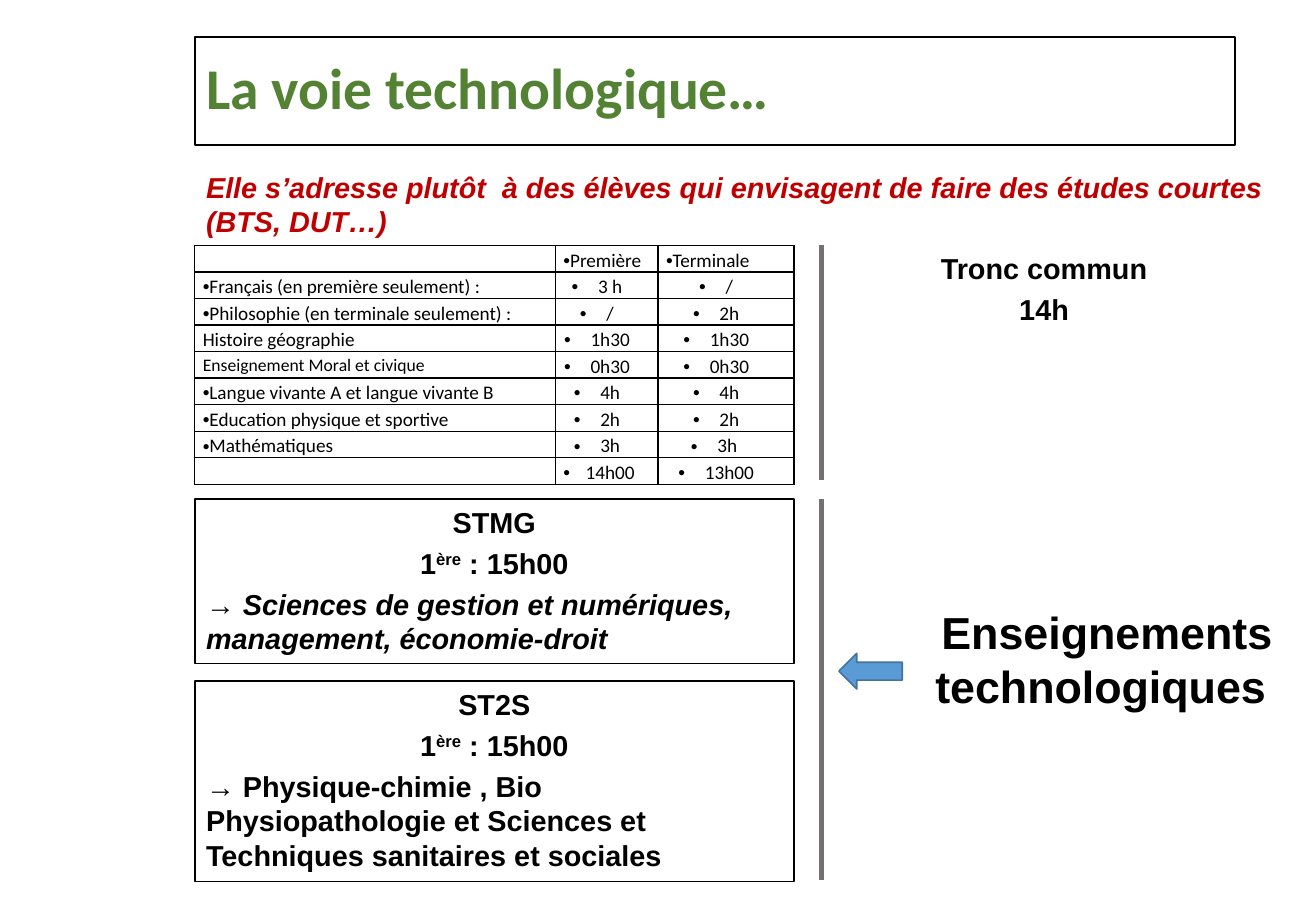
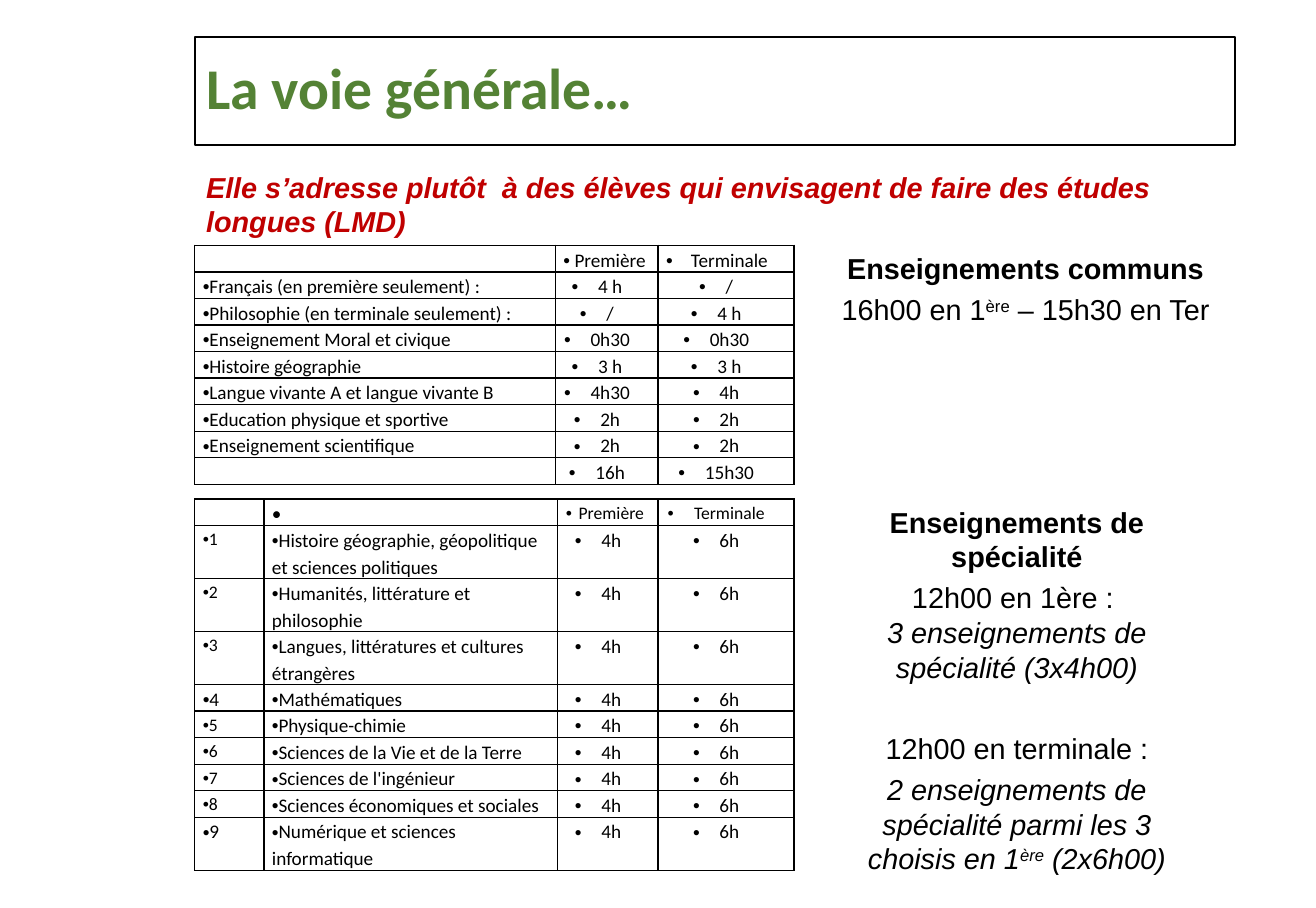
from dataclasses import dataclass
from typing import Optional, Sequence, Union

from pptx import Presentation
from pptx.dml.color import RGBColor
from pptx.enum.shapes import MSO_CONNECTOR as Connector
from pptx.enum.shapes import MSO_SHAPE as Preset
from pptx.enum.text import MSO_ANCHOR as Anchor
from pptx.enum.text import PP_ALIGN as Align
from pptx.oxml import parse_xml
from pptx.oxml.ns import nsdecls, qn
from pptx.oxml.xmlchemy import OxmlElement
from pptx.util import Inches, Pt


# Theme: colours, fonts and type sizes
@dataclass(frozen=True)
class Theme:
    black: str = "000000"
    title: str = "548235"
    audience: str = "C00000"
    rule: str = "767171"
    arrow: str = "5B9BD5"
    arrow_line: str = "43739E"
    body_font: str = "Arial"
    table_font: str = "Calibri"
    title_size: float = 36
    large_size: float = 28
    body_size: float = 18
    cell_size: float = 12
    small_size: float = 11
    paragraph_gap: float = 4


THEME = Theme()
LEFT = 1.69
TOP_BLOCK = 2.13
LOWER_BLOCK = 4.33
ROW_HEIGHT = 0.23


@dataclass(frozen=True)
class Box:
    left: float
    top: float
    width: float
    height: float

    def lengths(self) -> list:
        return [Inches(value) for value in (self.left, self.top, self.width, self.height)]


@dataclass(frozen=True)
class Span:
    text: str
    bold: bool = True
    italic: bool = False
    raised: bool = False


@dataclass(frozen=True)
class Line:
    spans: Sequence[Span]
    align: Align = Align.CENTER
    gap: float = THEME.paragraph_gap


@dataclass(frozen=True)
class Cell:
    text: str
    size: float = THEME.cell_size
    bullet: bool = True
    align: Align = Align.LEFT


@dataclass(frozen=True)
class Track:
    title: str
    audience: str
    audience_width: float
    headers: Sequence[Cell]
    subjects: Sequence[Sequence[Union[str, Cell]]]
    totals: Sequence[str]


def color(code: str) -> RGBColor:
    return RGBColor.from_string(code)


# Text
def write_text(paragraph, text: str, *, size: float = THEME.body_size,
               font: str = THEME.body_font, ink: str = THEME.black,
               bold: bool = False, italic: bool = False, raised: bool = False) -> None:
    for position, part in enumerate(text.split("\n")):
        if position:
            paragraph.add_line_break()
        if not part:
            continue
        run = paragraph.add_run()
        run.text = part
        run.font.size, run.font.name = Pt(size), font
        run.font.bold, run.font.italic = bold, italic
        run.font.color.rgb = color(ink)
        if raised:
            run.font._element.set("baseline", "30000")


def fill_lines(frame, lines: Sequence[Line], size: float = THEME.body_size,
               ink: str = THEME.black) -> None:
    frame.word_wrap = True
    for index, line in enumerate(lines):
        paragraph = frame.add_paragraph() if index else frame.paragraphs[0]
        paragraph.alignment = line.align
        if index:
            paragraph.space_before = Pt(line.gap)
        for span in line.spans:
            write_text(paragraph, span.text, size=size, ink=ink, bold=span.bold,
                       italic=span.italic, raised=span.raised)


def add_text(slide, box: Box, lines: Sequence[Line], size: float = THEME.body_size,
             ink: str = THEME.black) -> None:
    fill_lines(slide.shapes.add_textbox(*box.lengths()).text_frame, lines, size, ink)


# Shapes
def add_preset(slide, preset: Preset, box: Box, line_color: str, line_width: float,
               fill: Optional[str] = None):
    shape = slide.shapes.add_shape(preset, *box.lengths())
    shape.shadow.inherit = False
    if fill:
        shape.fill.solid()
        shape.fill.fore_color.rgb = color(fill)
    else:
        shape.fill.background()
    shape.line.color.rgb = color(line_color)
    shape.line.width = Pt(line_width)
    return shape


def add_frame(slide, box: Box, lines: Sequence[Line]) -> None:
    shape = add_preset(slide, Preset.RECTANGLE, box, THEME.black, 1)
    shape.text_frame.vertical_anchor = Anchor.TOP
    fill_lines(shape.text_frame, lines)


def add_vertical_rule(slide, x: float, top: float, bottom: float) -> None:
    rule = slide.shapes.add_connector(Connector.STRAIGHT, Inches(x), Inches(top),
                                      Inches(x), Inches(bottom))
    rule.line.color.rgb = color(THEME.rule)
    rule.line.width = Pt(3)
    rule._element.spPr.append(OxmlElement("a:effectLst"))


# Tables
def add_borders(cell) -> None:
    properties = cell._tc.get_or_add_tcPr()
    for index, side in enumerate(("lnL", "lnR", "lnT", "lnB")):
        properties.insert(index, parse_xml(
            f'<a:{side} {nsdecls("a")} w="12700"><a:solidFill>'
            f'<a:srgbClr val="{THEME.black}"/></a:solidFill></a:{side}>'))


def add_bullet(paragraph, centered: bool) -> None:
    properties = paragraph._p.get_or_add_pPr()
    # Centred values hang their bullet; labels keep it tight
    margin, indent = (0.06, -0.23) if centered else (0, 0)
    properties.set("marL", str(Inches(margin)))
    properties.set("indent", str(Inches(indent)))
    font = OxmlElement("a:buFont")
    font.set("typeface", THEME.body_font)
    bullet = OxmlElement("a:buChar")
    bullet.set("char", "•")
    properties.extend([font, bullet])


def fill_cell(cell, content: Cell) -> None:
    cell.fill.background()
    cell.margin_left = cell.margin_right = Inches(0.07)
    cell.margin_top = cell.margin_bottom = Inches(0)
    add_borders(cell)
    paragraph = cell.text_frame.paragraphs[0]
    paragraph.line_spacing = 1.15
    paragraph.alignment = content.align
    if content.text:
        if content.bullet:
            add_bullet(paragraph, content.align == Align.CENTER)
        write_text(paragraph, content.text, size=content.size, font=THEME.table_font)
    else:
        end = paragraph._p.find(qn("a:endParaRPr"))
        if end is None:
            end = OxmlElement("a:endParaRPr")
            paragraph._p.append(end)
        end.set("sz", str(int(content.size * 100)))


def add_grid(slide, top: float, widths: Sequence[float],
             rows: Sequence[Sequence[Cell]]) -> None:
    box = Box(LEFT, top, sum(widths), ROW_HEIGHT * len(rows))
    table = slide.shapes.add_table(len(rows), len(widths), *box.lengths()).table
    table.first_row = table.horz_banding = False
    for column, width in zip(table.columns, widths):
        column.width = Inches(width)
    for row_index, row in enumerate(rows):
        table.rows[row_index].height = Inches(ROW_HEIGHT)
        for column_index, content in enumerate(row):
            fill_cell(table.cell(row_index, column_index), content)


def value(text: str, size: float = THEME.cell_size) -> Cell:
    return Cell(text, size, align=Align.CENTER)


def add_track(presentation, track: Track):
    """Title band, audience sentence and common-subject table."""
    slide = presentation.slides.add_slide(presentation.slide_layouts[6])
    title = add_preset(slide, Preset.RECTANGLE, Box(LEFT, 0.32, 9.03, 0.94), THEME.black, 1.5)
    title.text_frame.vertical_anchor = Anchor.MIDDLE
    paragraph = title.text_frame.paragraphs[0]
    paragraph.alignment, paragraph.line_spacing = Align.LEFT, 0.9
    write_text(paragraph, track.title, size=THEME.title_size, font=THEME.table_font,
               ink=THEME.title, bold=True)
    add_text(slide, Box(LEFT, 1.42, track.audience_width, 0.71),
             [Line([Span(track.audience, italic=True)], Align.LEFT)], ink=THEME.audience)
    rows = [[Cell(""), *track.headers]]
    for label, *hours in [*track.subjects, ("", *track.totals)]:
        first = label if isinstance(label, Cell) else Cell(label)
        rows.append([first, *map(value, hours)])
    add_grid(slide, TOP_BLOCK, (3.13, 0.89, 1.18), rows)
    return slide


# Content
TECHNOLOGICAL = Track(
    "La voie technologique…",
    "Elle s’adresse plutôt  à des élèves qui envisagent de faire des études courtes (BTS, DUT…)",
    9.73, (Cell("Première"), Cell("Terminale")),
    (("Français (en première seulement) :", "3 h", "/"),
     ("Philosophie (en terminale seulement) :", "/", "2h"),
     (Cell("Histoire géographie", bullet=False), "1h30", "1h30"),
     (Cell("Enseignement Moral et civique", THEME.small_size, False), "0h30", "0h30"),
     ("Langue vivante A et langue vivante B", "4h", "4h"),
     ("Education physique et sportive", "2h", "2h"),
     ("Mathématiques", "3h", "3h ")), ("14h00", "13h00"))
GENERAL = Track(
    "La voie générale…",
    "Elle s’adresse plutôt  à des élèves qui envisagent de faire des études longues (LMD)",
    9.06, (value("Première"), value("Terminale")),
    (("Français (en première seulement) :", "4 h", "/"),
     ("Philosophie (en terminale seulement) :", "/", "4 h"),
     ("Enseignement Moral et civique", "0h30", "0h30"),
     ("Histoire géographie ", "3 h", "3 h"),
     ("Langue vivante A et langue vivante B", "4h30", "4h"),
     ("Education physique et sportive", "2h", "2h"),
     ("Enseignement scientifique", "2h", "2h")), ("16h", "15h30"))
SERIES = (
    ("STMG", Span("→ Sciences de gestion et numériques, management, économie-droit",
                  italic=True), 4.33, 1.43),
    ("ST2S", Span("→ Physique-chimie , Bio Physiopathologie et Sciences et "
                  "Techniques sanitaires et sociales"), 5.91, 1.74))
SPECIALTIES = (
    "Histoire géographie, géopolitique et sciences politiques",
    "Humanités, littérature et philosophie",
    "Langues, littératures et cultures étrangères",
    "Mathématiques", "Physique-chimie", "Sciences de la Vie et de la Terre",
    "Sciences de l'ingénieur ", "Sciences économiques et sociales ",
    "Numérique et sciences informatique")
LARGE_NUMBERS = (4, 9)


def build_technological(presentation) -> None:
    slide = add_track(presentation, TECHNOLOGICAL)
    add_text(slide, Box(7.37, TOP_BLOCK, 3.38, 0.77),
             [Line([Span("Tronc commun")]), Line([Span("14h")])])
    add_text(slide, Box(7.99, 5.2, 3.23, 1.04),
             [Line([Span("Enseignements technologiques ")])], THEME.large_size)
    for name, subjects, top, height in SERIES:
        hours = [Span("1"), Span("ère", raised=True), Span(" : 15h00")]
        add_frame(slide, Box(LEFT, top, 5.2, height),
                  [Line([Span(name)]), Line(hours), Line([subjects], Align.LEFT)])
    add_preset(slide, Preset.LEFT_ARROW, Box(7.28, 5.67, 0.55, 0.31),
               THEME.arrow_line, 1, THEME.arrow)
    for top, bottom in ((TOP_BLOCK, 4.17), (LOWER_BLOCK, 7.64)):
        add_vertical_rule(slide, 7.13, top, bottom)


def build_general(presentation) -> None:
    slide = add_track(presentation, GENERAL)
    small = THEME.small_size
    rows = [[Cell("", small), Cell("•", bullet=False),
             value("Première", small), value("Terminale", small)]]
    for number, name in enumerate(SPECIALTIES, 1):
        size = THEME.cell_size if number in LARGE_NUMBERS else small
        rows.append([Cell(str(number), size), Cell(name), value("4h"), value("6h")])
    add_grid(slide, LOWER_BLOCK, (0.6, 2.55, 0.87, 1.18), rows)
    add_text(slide, Box(7.05, TOP_BLOCK, 3.7, 0.77), [
        Line([Span("Enseignements communs")]),
        Line([Span("16h00 en 1", False), Span("ère", False, raised=True),
              Span(" – 15h30 en Ter", False)])])
    add_text(slide, Box(7.21, LOWER_BLOCK, 3.23, 3.37), [
        Line([Span("Enseignements de spécialité")]),
        Line([Span("12h00 en 1ère : \n", False),
              Span("3 enseignements de spécialité (3x4h00)", False, True)]),
        Line([Span("12h00 en terminale :", False)], gap=29.5),
        Line([Span("2 enseignements de spécialité parmi les 3 choisis en 1", False, True),
              Span("ère", False, True, True), Span(" (2x6h00)", False, True)])])


def main() -> None:
    presentation = Presentation()
    presentation.slide_width, presentation.slide_height = Inches(11.42), Inches(7.88)
    build_technological(presentation)
    build_general(presentation)
    presentation.save("out.pptx")


if __name__ == "__main__":
    main()
